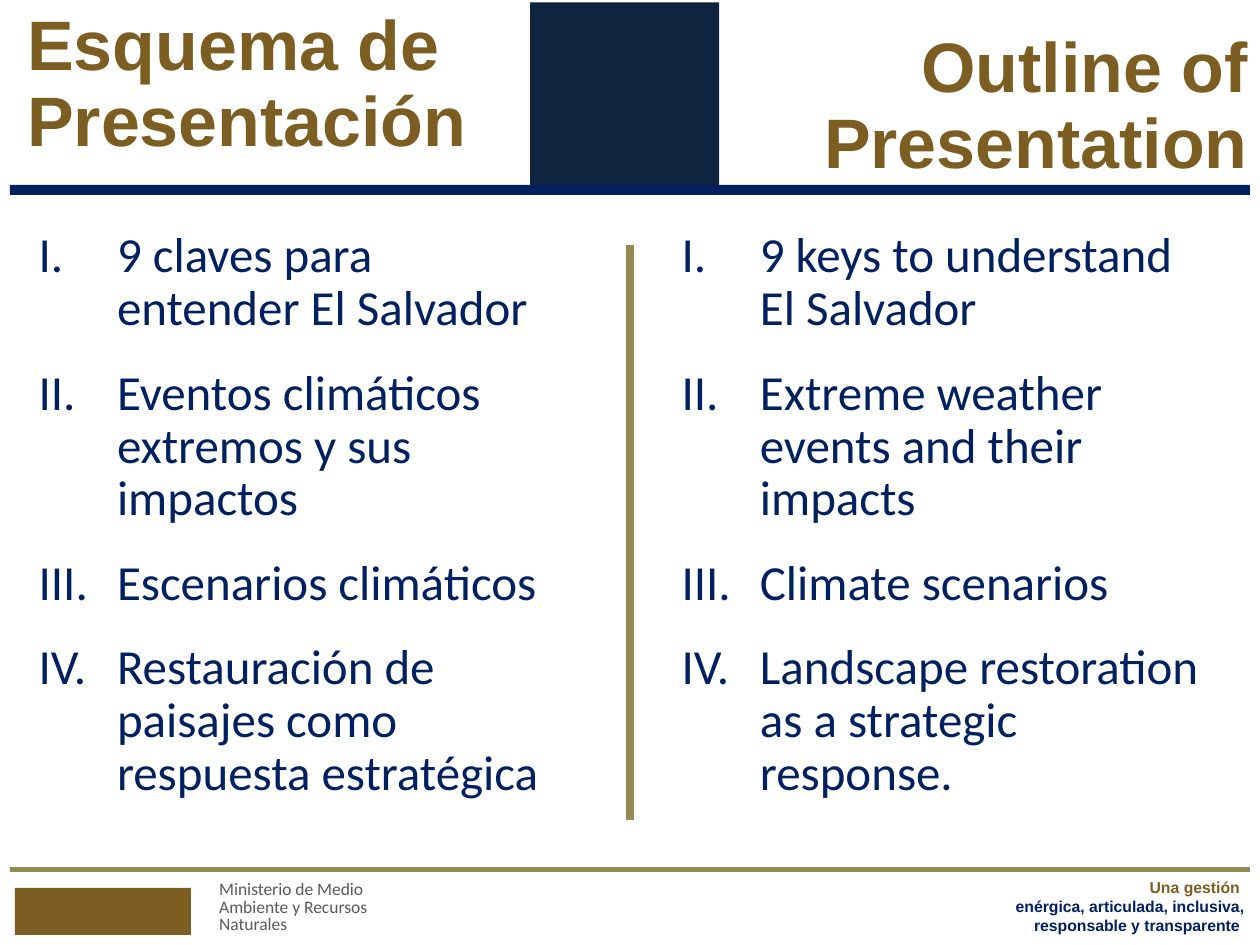
from dataclasses import dataclass

from lxml import etree
from pptx import Presentation
from pptx import util as u
from pptx.dml.color import RGBColor
from pptx.enum import shapes, text
from pptx.oxml.ns import qn


@dataclass(frozen=True)
class Theme:
    navy: str = "002060"
    dark: str = "0F243E"
    bronze: str = "7C5E22"
    olive: str = "948A54"
    grey: str = "595959"
    head_font: str = "Arial"
    body_font: str = "Calibri"
    title: int = 40
    body: int = 28
    small: int = 10
    motto: int = 9


LEFT, RIGHT = text.PP_ALIGN.LEFT, text.PP_ALIGN.RIGHT
TOP, MIDDLE = text.MSO_ANCHOR.TOP, text.MSO_ANCHOR.MIDDLE


def write(p, words, *, font, size, color, bold=False):
    """Add formatted words to a paragraph; a newline becomes a line break."""
    for i, line in enumerate(words.split("\n")):
        if i:
            p.add_line_break()
        if line:
            r = p.add_run()
            r.text = line
            r.font.name = font
            r.font.size = u.Pt(size)
            r.font.bold = bold
            r.font.color.rgb = RGBColor.from_string(color)


class SlideBuilder:
    def __init__(self, slide, theme):
        self.slide = slide
        self.theme = theme

    def frame(self, box, anchor=TOP):
        tf = self.slide.shapes.add_textbox(*map(u.Cm, box)).text_frame
        tf.word_wrap = True
        tf.vertical_anchor = anchor
        return tf

    def label(self, box, parts, *, align=LEFT, spacing=None, anchor=TOP, **fmt):
        """One paragraph made of (words, colour) parts."""
        tf = self.frame(box, anchor)
        p = tf.paragraphs[0]
        p.alignment = align
        p.line_spacing = spacing
        for words, color in parts:
            write(p, words, color=color, **fmt)
        return tf

    def title(self, box, words, **layout):
        t = self.theme
        self.label(box, [(words, t.bronze)], spacing=0.9, font=t.head_font,
                   size=t.title, bold=True, **layout)

    def roman_list(self, box, items):
        t = self.theme
        tf = self.frame(box)
        for i, item in enumerate(items):
            p = tf.add_paragraph() if i else tf.paragraphs[0]
            pPr = p._p.get_or_add_pPr()
            pPr.set("marL", str(u.Cm(1.58)))
            pPr.set("indent", str(-u.Cm(1.58)))
            etree.SubElement(pPr, qn("a:buAutoNum"), type="romanUcPeriod")
            p.line_spacing = 0.9
            if i:
                p.space_before = u.Pt(18)
            write(p, item, font=t.body_font, size=t.body, color=t.navy)

    def block(self, box, color):
        sp = self.slide.shapes.add_shape(shapes.MSO_SHAPE.RECTANGLE, *map(u.Cm, box))
        sp.shadow.inherit = False
        sp.fill.solid()
        sp.fill.fore_color.rgb = RGBColor.from_string(color)
        sp.line.fill.background()

    def line(self, ends, color, width):
        cxn = self.slide.shapes.add_connector(
            shapes.MSO_CONNECTOR.STRAIGHT, *map(u.Cm, ends))
        cxn.line.color.rgb = RGBColor.from_string(color)
        cxn.line.width = u.Pt(width)
        etree.SubElement(cxn._element.spPr, qn("a:effectLst"))


def main():
    prs = Presentation()
    prs.slide_width, prs.slide_height = u.Cm(25.4), u.Cm(19.05)
    t = Theme()
    s = SlideBuilder(prs.slides.add_slide(prs.slide_layouts[6]), t)

    # Footer and header rules
    s.label((4.17, 17.65, 6.35, 1.32),
            [("Ministerio de Medio \nAmbiente y Recursos \nNaturales", t.grey)],
            spacing=u.Pt(10), font=t.body_font, size=t.small)
    s.block((0.3, 17.9, 3.55, 0.95), t.bronze)
    s.block((0.2, 17.48, 25, 0.1), t.olive)
    motto = s.label((18.47, 17.48, 6.76, 1.5),
                    [("Una gestión \n", t.bronze),
                     ("enérgica, articulada, inclusiva, responsable y transparente ",
                      t.navy)],
                    align=RIGHT, spacing=u.Pt(11), font=t.head_font,
                    size=t.motto, bold=True)
    motto.margin_top, motto.margin_right = u.Cm(0.2), u.Cm(0.15)
    s.block((0.2, 3.73, 25, 0.2), t.navy)

    # The outline in both languages
    s.roman_list((13.49, 4.52, 11.2, 12.19), [
        "9 keys to understand El Salvador",
        "Extreme weather events and their impacts",
        "Climate scenarios",
        "Landscape restoration as a strategic response.",
    ])
    s.roman_list((0.53, 4.52, 11.61, 12.19), [
        "9 claves para \nentender El Salvador",
        "Eventos climáticos extremos y sus impactos",
        "Escenarios climáticos",
        "Restauración de paisajes como respuesta estratégica",
    ])
    s.title((14.1, 0.53, 11.3, 3.2), "Outline of Presentation", align=RIGHT)
    s.block((10.69, 0.05, 3.81, 3.68), t.dark)
    s.title((0.3, 0.13, 11.84, 3.2), "Esquema de Presentación", anchor=MIDDLE)
    s.line((12.7, 4.93, 12.7, 16.54), t.olive, 5)

    prs.save("out.pptx")


if __name__ == "__main__":
    main()
